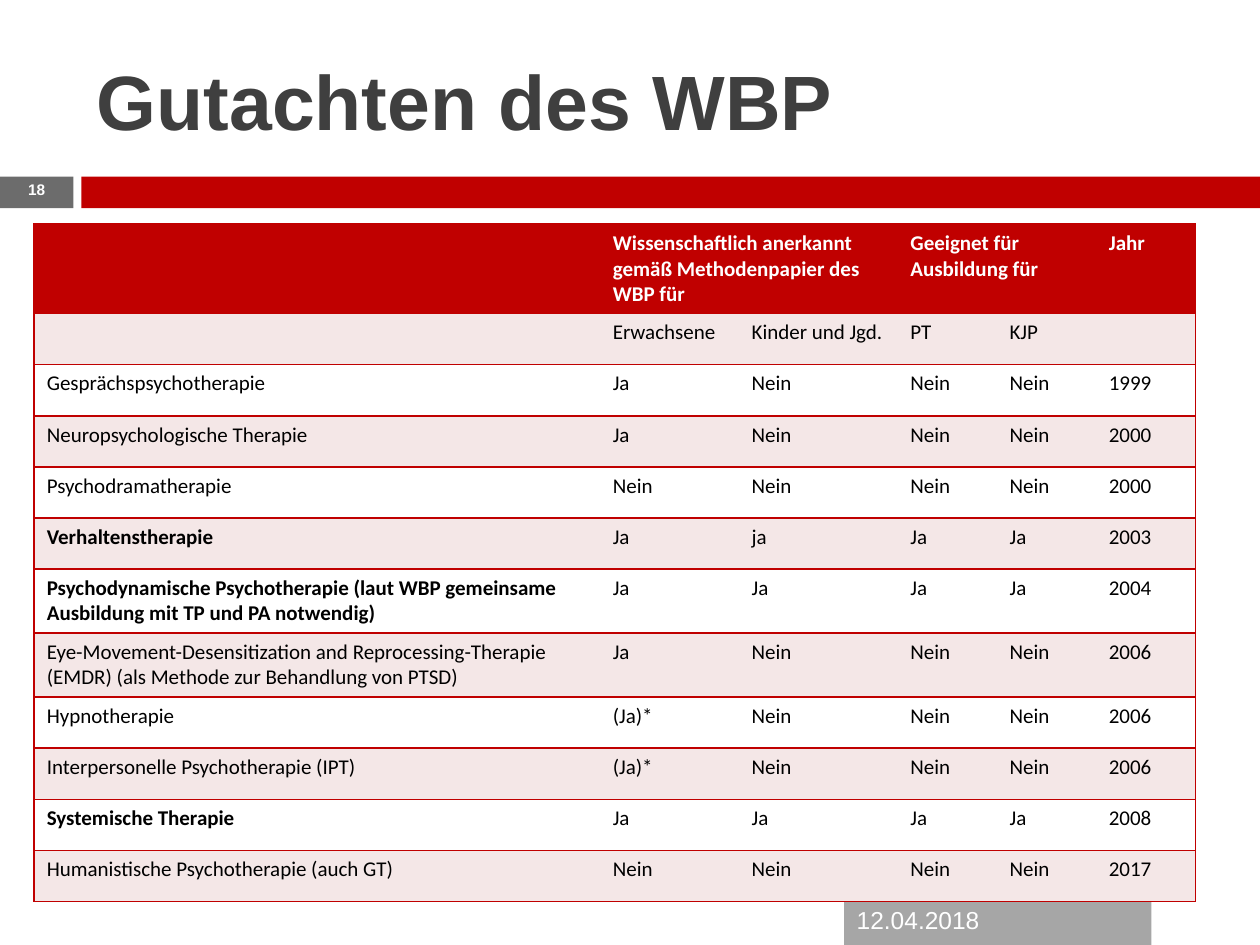
from lxml import etree
from pptx import Presentation
from pptx import util as u
from pptx.dml.color import RGBColor
from pptx.enum import shapes, text
from pptx.oxml import ns

hues = {"red": "C00000", "dark": "3F3F3F", "slate": "6C6C6C", "grey": "A6A6A6",
        "pink": "F4E7E7", "white": "FFFFFF", "black": "000000"}


def write(frame, words, size=12, font="Calibri", hue="black", bold=False,
          align=text.PP_ALIGN.LEFT):
    frame.word_wrap = True
    para = frame.paragraphs[0]
    para.alignment = align
    para.font.size = u.Pt(size)
    if words:
        run = para.add_run()
        run.text = words
        run.font.size = u.Pt(size)
        run.font.name = font
        run.font.bold = bold
        run.font.color.rgb = RGBColor.from_string(hues[hue])


def edge(cell, side):
    line = etree.SubElement(cell._tc.get_or_add_tcPr(), ns.qn("a:ln" + side), w="12700")
    fill = etree.SubElement(line, ns.qn("a:solidFill"))
    etree.SubElement(fill, ns.qn("a:srgbClr"), val=hues["red"])


deck = Presentation()
deck.slide_width = u.Cm(25.4)
deck.slide_height = u.Cm(19.05)
slide = deck.slides.add_slide(deck.slide_layouts[5])

title = slide.shapes.title
title.left, title.top, title.width, title.height = u.Cm(1.7), u.Cm(0.64), u.Cm(22.66), u.Cm(2.74)
title.text_frame.vertical_anchor = text.MSO_ANCHOR.MIDDLE
write(title.text_frame, "Gutachten des WBP", size=44, font="Arial", hue="dark", bold=True)

bars = [
    (0, 3.56, 1.48, 0.64, "slate", ""),
    (1.64, 3.56, 23.76, 0.64, "red", ""),
    (17.02, 18.03, 6.19, 1.02, "grey", "12.04.2018"),
]
for left, top, width, height, hue, words in bars:
    bar = slide.shapes.add_shape(shapes.MSO_SHAPE.RECTANGLE, u.Cm(left), u.Cm(top),
                                 u.Cm(width), u.Cm(height))
    bar.shadow.inherit = False
    bar.fill.solid()
    bar.fill.fore_color.rgb = RGBColor.from_string(hues[hue])
    bar.line.fill.background()
    if words:
        bar.text_frame.vertical_anchor = text.MSO_ANCHOR.MIDDLE
        write(bar.text_frame, words, size=14, font="Arial", hue="white")

rows = [
    ["", "Wissenschaftlich anerkannt gemäß Methodenpapier des WBP für", "",
     "Geeignet für Ausbildung für", "", "Jahr"],
    ["", "Erwachsene", "Kinder und Jgd.", "PT", "KJP", ""],
    ["Gesprächspsychotherapie", "Ja", "Nein", "Nein", "Nein", "1999"],
    ["Neuropsychologische Therapie", "Ja", "Nein", "Nein", "Nein", "2000"],
    ["Psychodramatherapie", "Nein", "Nein", "Nein", "Nein", "2000"],
    ["Verhaltenstherapie", "Ja", "ja", "Ja", "Ja", "2003"],
    ["Psychodynamische Psychotherapie (laut WBP gemeinsame Ausbildung mit TP und PA notwendig)",
     "Ja", "Ja", "Ja", "Ja", "2004"],
    ["Eye-Movement-Desensitization and Reprocessing-Therapie (EMDR) "
     "(als Methode zur Behandlung von PTSD)", "Ja", "Nein", "Nein", "Nein", "2006"],
    ["Hypnotherapie", "(Ja)*", "Nein", "Nein", "Nein", "2006"],
    ["Interpersonelle Psychotherapie (IPT)", "(Ja)*", "Nein", "Nein", "Nein", "2006"],
    ["Systemische Therapie", "Ja", "Ja", "Ja", "Ja", "2008"],
    ["Humanistische Psychotherapie (auch GT)", "Nein", "Nein", "Nein", "Nein", "2017"],
]
strong = {5, 6, 10}
widths = [11.41, 2.8, 3.2, 2, 2, 2]
tall = {0: 1.8, 6: 1.29, 7: 1.29}

frame = slide.shapes.add_table(len(rows), len(widths), u.Cm(0.69), u.Cm(4.52),
                               u.Cm(sum(widths)), u.Cm(13.65))
table = frame.table
style = table._tbl.tblPr.find(ns.qn("a:tableStyleId"))
style.text = "{2D5ABB26-0587-4C30-8999-92F81FD0307C}"
for col, width in zip(table.columns, widths):
    col.width = u.Cm(width)
for start in (1, 3):
    table.cell(0, start).merge(table.cell(0, start + 1))

for r, row in enumerate(rows):
    table.rows[r].height = u.Cm(tall.get(r, 1.03))
    head = r == 0
    hue = "red" if head else "pink" if r % 2 else "white"
    for c, words in enumerate(row):
        cell = table.cell(r, c)
        sides = ("L" if c == 0 else "") + ("R" if c == len(row) - 1 else "") + "TB"
        for side in sides:
            edge(cell, side)
        cell.fill.solid()
        cell.fill.fore_color.rgb = RGBColor.from_string(hues[hue])
        write(cell.text_frame, words, hue="white" if head else "black",
              bold=head or (c == 0 and r in strong))

page = slide.shapes.add_textbox(0, u.Cm(3.53), u.Cm(1.48), u.Cm(0.58))
page.text_frame.vertical_anchor = text.MSO_ANCHOR.MIDDLE
write(page.text_frame, "18", size=8.8, font="Arial", hue="white", bold=True,
      align=text.PP_ALIGN.CENTER)

deck.save("out.pptx")
